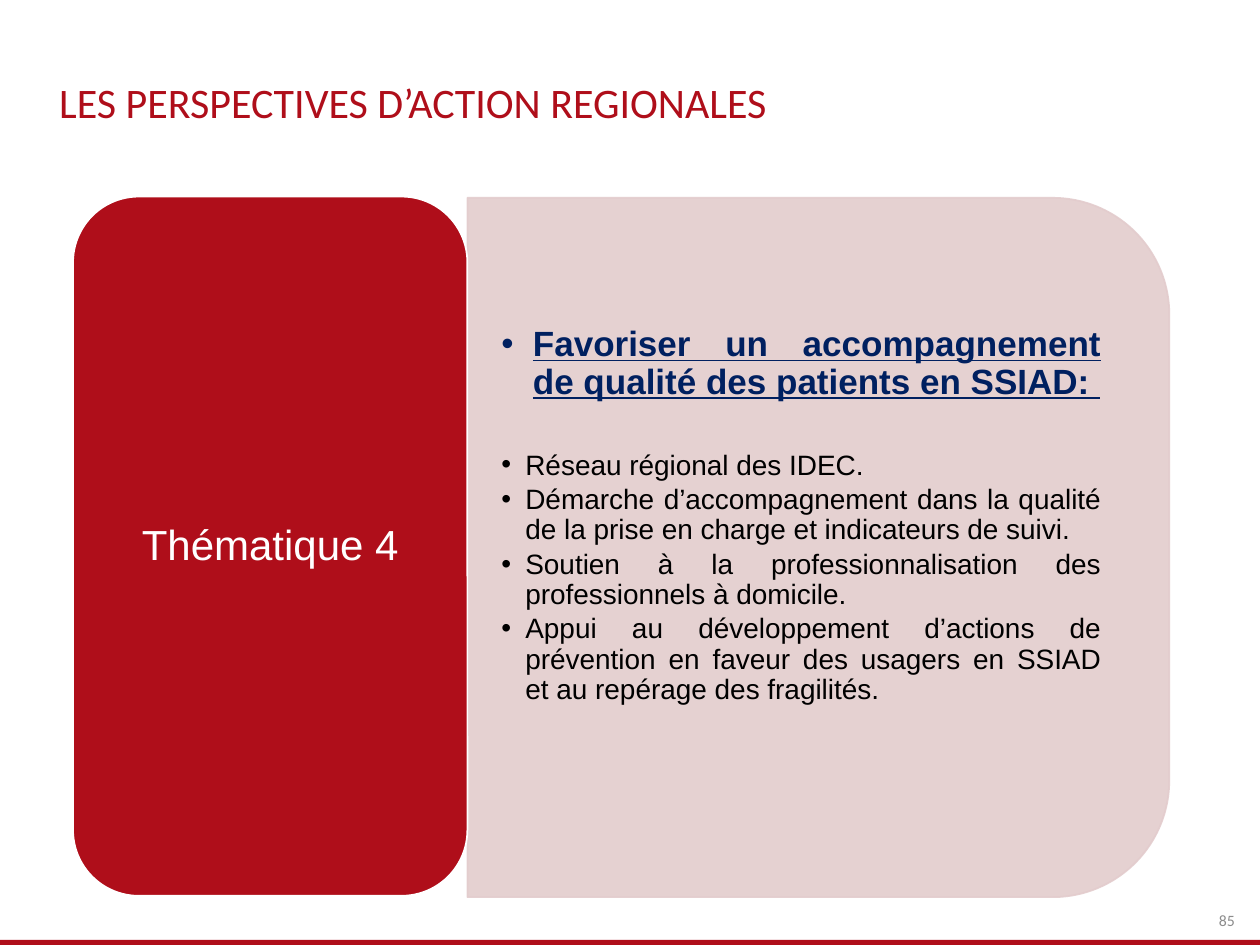
from pptx import Presentation
from pptx.dml.color import RGBColor
from pptx.enum.shapes import MSO_SHAPE
from pptx.enum.text import MSO_ANCHOR, PP_ALIGN
from pptx.oxml.ns import qn
from pptx.util import Inches, Pt
from lxml.etree import SubElement

RED, PINK, NAVY = "AF0E1A", "E3CCCD", "002060"
ACTIONS = [
    "Réseau régional des IDEC.",
    "Démarche d’accompagnement dans la qualité de la prise en charge et indicateurs de suivi.",
    "Soutien à la professionnalisation des professionnels à domicile.",
    "Appui au développement d’actions de prévention en faveur des usagers en SSIAD "
    "et au repérage des fragilités.",
]


def rgb(value):
    return RGBColor.from_string(value)


def set_alpha(color_format, percent):
    color = color_format._xFill.find(qn("a:srgbClr"))
    SubElement(color, qn("a:alpha"), val=str(percent * 1000))


def add_block(s, kind, box, fill, line=None, alpha=None, rotation=0):
    sp = s.shapes.add_shape(kind, *map(Inches, box))
    sp.shadow.inherit = False
    sp.rotation = rotation
    sp.fill.solid()
    sp.fill.fore_color.rgb = rgb(fill)
    if line:
        sp.line.color.rgb = rgb(line)
        sp.line.width = Pt(1)
    else:
        sp.line.fill.background()
    if alpha:
        for color in sp._element.spPr.iter(qn("a:srgbClr")):
            SubElement(color, qn("a:alpha"), val=str(alpha * 1000))
    return sp


def add_text_frame(s, box, insets=(0, 0, 0, 0), anchor=MSO_ANCHOR.TOP):
    tf = s.shapes.add_textbox(*map(Inches, box)).text_frame
    tf.word_wrap = True
    tf.vertical_anchor = anchor
    for side, inset in zip(("left", "top", "right", "bottom"), insets):
        setattr(tf, f"margin_{side}", Inches(inset))
    return tf


def write(p, text, color, font, layout, indent=0):
    if indent:
        pPr = p._p.get_or_add_pPr()
        pPr.set("marL", str(Inches(indent)))
        pPr.set("indent", str(-Inches(indent)))
        SubElement(pPr, qn("a:buFont"), typeface="Arial")
        SubElement(pPr, qn("a:buChar"), char="•")
    for name, value in layout.items():
        setattr(p, name, value)
    r = p.add_run()
    r.text = text
    r.font.color.rgb = rgb(color)
    for name, value in font.items():
        setattr(r.font, name, value)


def add_actions(s):
    tf = add_text_frame(s, (3.71, 1.84, 5.3, 5.01), (0.27, 0.75, 0.27, 0.14))
    layout = {"alignment": PP_ALIGN.JUSTIFY, "line_spacing": 0.9}
    write(tf.paragraphs[0], "Favoriser un accompagnement de qualité des patients en SSIAD: ",
          NAVY, {"name": "Arial", "size": Pt(20), "bold": True, "underline": True},
          {**layout, "space_after": Pt(28)}, 0.25)
    for action in ACTIONS:
        write(tf.add_paragraph(), action, "000000", {"name": "Arial", "size": Pt(16)},
              {**layout, "space_after": Pt(2.4)}, 0.19)


def main():
    prs = Presentation()
    prs.slide_width, prs.slide_height = Inches(10), Inches(7.5)
    s = prs.slides.add_slide(prs.slide_layouts[6])

    # Footer bar and title
    add_block(s, MSO_SHAPE.RECTANGLE, (0, 7.46, 10, 0.04), RED)
    tf = add_text_frame(s, (0.47, 0.67, 9.06, 0.35))
    write(tf.paragraphs[0], "LES PERSPECTIVES D’ACTION REGIONALES", RED,
          {"name": "Calibri", "size": Pt(24)}, {"line_spacing": 0.85})

    # Actions panel
    add_block(s, MSO_SHAPE.ROUND_2_SAME_RECTANGLE, (3.72, 1.56, 5.55, 5.57),
              PINK, PINK, alpha=90, rotation=90)
    add_actions(s)

    # Theme block
    add_block(s, MSO_SHAPE.ROUNDED_RECTANGLE, (0.58, 1.56, 3.13, 5.55), RED, "FFFFFF")
    tf = add_text_frame(s, (0.73, 1.72, 2.83, 5.24), (0.1, 0.05, 0.1, 0.05), MSO_ANCHOR.MIDDLE)
    write(tf.paragraphs[0], "Thématique 4", "FFFFFF", {"name": "Arial", "size": Pt(24)},
          {"alignment": PP_ALIGN.CENTER, "line_spacing": 0.9})

    # Page number
    tf = add_text_frame(s, (9.55, 7.23, 0.25, 0.15))
    write(tf.paragraphs[0], "85", "8C8C8C", {"name": "Calibri", "size": Pt(9)},
          {"alignment": PP_ALIGN.RIGHT})

    prs.save("out.pptx")


if __name__ == "__main__":
    main()
